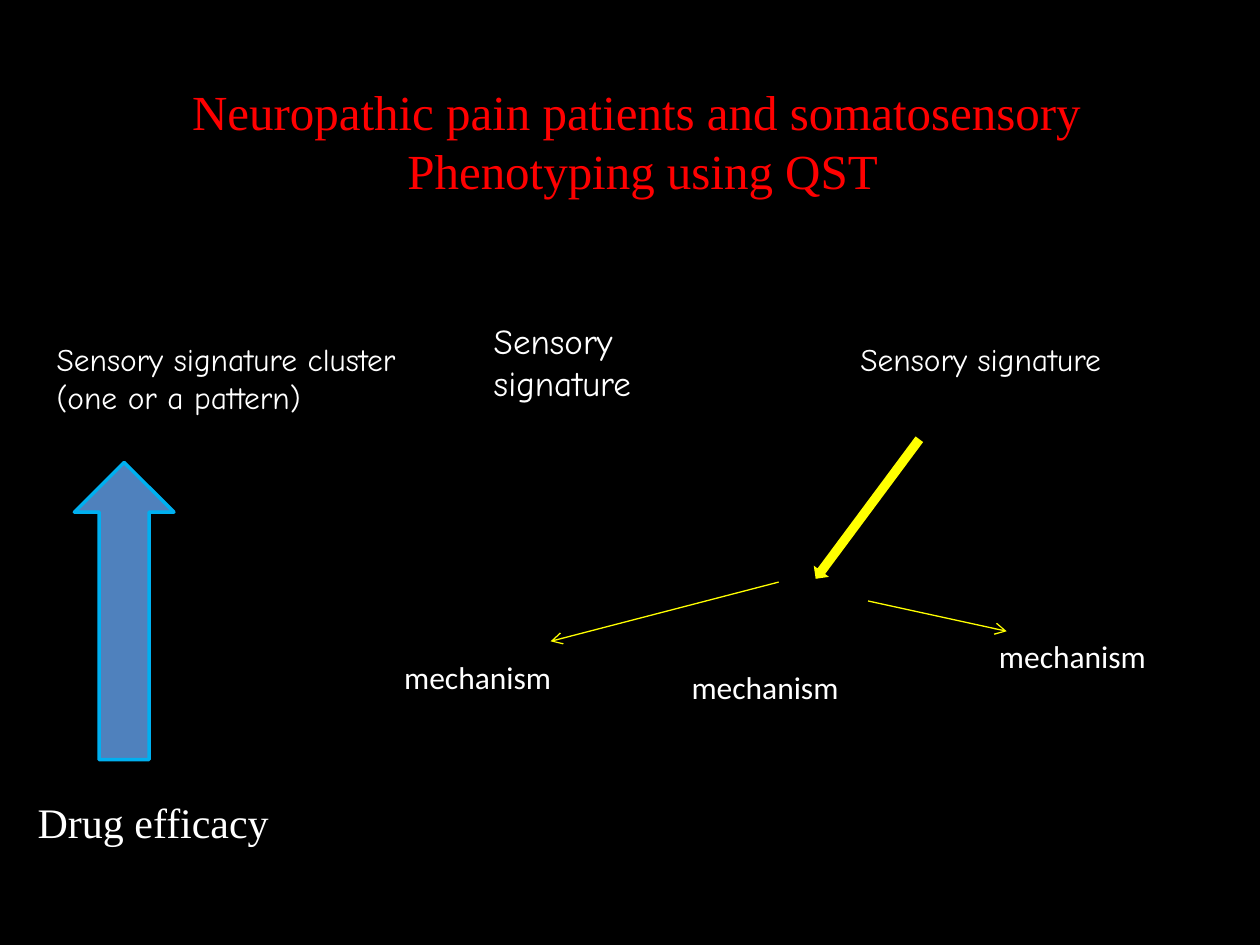
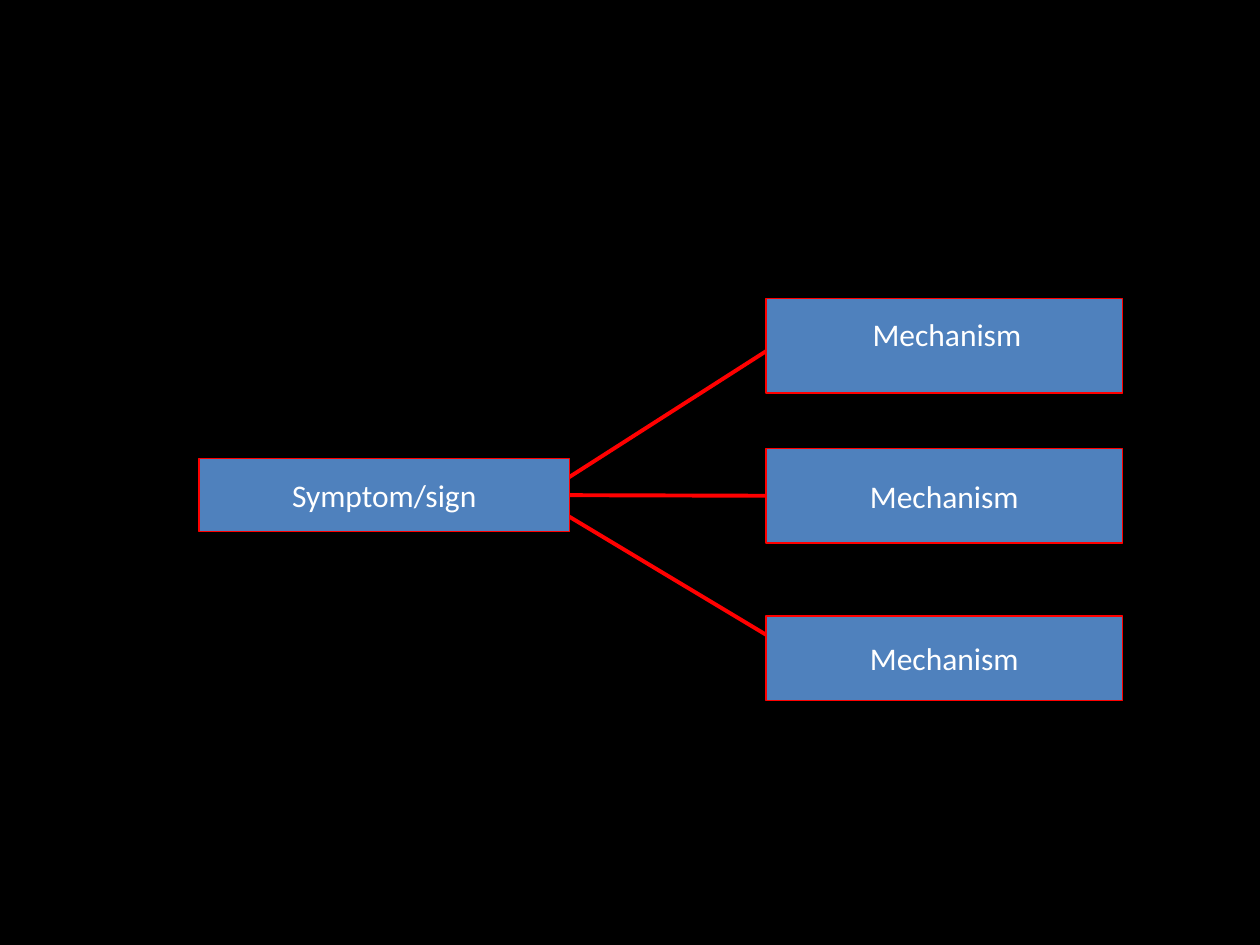
from pptx import Presentation
from pptx.dml.color import RGBColor
from pptx.enum.shapes import MSO_CONNECTOR as CONN, MSO_SHAPE as SHAPE
from pptx.enum.text import MSO_ANCHOR as ANCHOR, MSO_AUTO_SIZE as AUTO, PP_ALIGN as ALIGN
from pptx.oxml.ns import qn
from pptx.util import Inches, Pt
from lxml import etree

COLORS = {"black": "000000", "white": "FFFFFF", "red": "FF0000",
          "yellow": "FFFF00", "blue": "4F81BD", "sky": "00B0F0"}
SANS, SERIF, COMIC = "Calibri", "Times New Roman", "Comic Neue"

# Slide 1 content: text, (left, top, width, height), font, size
TITLE = ["Neuropathic pain patients and somatosensory ", "Phenotyping using QST"]
LABELS = [
    ("Sensory signature cluster (one or a pattern)", (0.35, 2.65, 2.91, 0.71), COMIC, 18),
    ("Sensory signature", (3.82, 2.49, 2.05, 0.44), COMIC, 20),
    ("Sensory signature", (6.73, 2.65, 2.44, 0.4), COMIC, 18),
    ("mechanism", (3.11, 5.17, 2.2, 0.4), SANS, 18),
    ("mechanism", (5.39, 5.25, 1.81, 0.4), SANS, 18),
    ("mechanism", (7.83, 5.01, 1.65, 0.4), SANS, 18),
    ("Drug efficacy", (0.2, 6.27, 2.05, 0.5), SERIF, 24),
]
MECHANISM_ARROWS = [((6.18, 4.62), (4.37, 5.09)), ((6.89, 4.77), (7.99, 5.01))]

# Slide 2 content: mechanism boxes share one column
SYMPTOM = ("Symptom/sign", (1.58, 3.64, 2.94, 0.58))
COLUMN_LEFT, COLUMN_WIDTH = 6.08, 2.83
MECHANISMS = [("", 2.37, 0.75), ("Mechanism", 3.56, 0.75), ("Mechanism", 4.89, 0.67)]
TOP_LABEL = ("Mechanism", (6.17, 2.45, 2.69, 0.5), SANS, 18)
LINKS = [((4.45, 3.83), (6.17, 2.73)), ((4.47, 3.94), (6.22, 3.94)),
         ((4.45, 4.06), (6.25, 5.14))]


def rgb(name):
    return RGBColor.from_string(COLORS[name])


def inches(values):
    return [Inches(v) for v in values]


def add_slide(prs, layout):
    s = prs.slides.add_slide(prs.slide_layouts[layout])
    s.background.fill.solid()
    s.background.fill.fore_color.rgb = rgb("black")
    return s


def style_text(tf, font, size, color="white", align=ALIGN.LEFT):
    for p in tf.paragraphs:
        p.alignment = align
        for r in p.runs:
            r.font.name, r.font.size = font, Pt(size)
            r.font.color.rgb = rgb(color)


def add_title(s, lines, box):
    sp = s.shapes.title
    sp.left, sp.top, sp.width, sp.height = inches(box)
    tf = sp.text_frame
    tf.text = "\n".join(lines)
    tf.auto_size, tf.vertical_anchor = AUTO.NONE, ANCHOR.TOP
    style_text(tf, SERIF, 28, "red", ALIGN.CENTER)


def add_label(s, text, box, font, size, align=ALIGN.LEFT):
    tf = s.shapes.add_textbox(*inches(box)).text_frame
    tf.word_wrap = True
    tf.text = text
    style_text(tf, font, size, align=align)


def add_block(s, kind, box, fill, line=None, width=0.75, text=""):
    sp = s.shapes.add_shape(kind, *inches(box))
    sp.shadow.inherit = False
    sp.fill.solid()
    sp.fill.fore_color.rgb = rgb(fill)
    if line:
        sp.line.color.rgb, sp.line.width = rgb(line), Pt(width)
    else:
        sp.line.fill.background()
    if text:
        tf = sp.text_frame
        tf.text = text
        tf.word_wrap, tf.vertical_anchor = False, ANCHOR.MIDDLE
        style_text(tf, SANS, 18, align=ALIGN.CENTER)
    return sp


def add_line(s, start, end, color, width, arrow=False):
    c = s.shapes.add_connector(CONN.STRAIGHT, *inches(start + end))
    c.line.color.rgb, c.line.width = rgb(color), Pt(width)
    if arrow:
        etree.SubElement(c.line._get_or_add_ln(), qn("a:tailEnd"), type="arrow")
    etree.SubElement(c._element.spPr, qn("a:effectLst"))
    return c


def build_phenotyping(prs):
    s = add_slide(prs, 5)
    add_title(s, TITLE, (0.2, 0.6, 9.8, 1.04))
    for label in LABELS:
        add_label(s, *label)
    # Arrows from signature to mechanisms, and up from drug efficacy
    add_block(s, SHAPE.DOWN_ARROW, (6.81, 3.35, 0.15, 1.38), "yellow").rotation = 36.6
    for start, end in MECHANISM_ARROWS:
        add_line(s, start, end, "yellow", 0.75, arrow=True)
    add_block(s, SHAPE.UP_ARROW, (0.59, 3.67, 0.79, 2.36), "blue", "sky", 2)


def build_symptom_map(prs):
    s = add_slide(prs, 6)
    # Links lie behind the boxes
    links = [add_line(s, start, end, "red", 2.25) for start, end in LINKS]
    boxes = [add_block(s, SHAPE.RECTANGLE, (COLUMN_LEFT, top, COLUMN_WIDTH, height),
                       "blue", "red", text=text) for text, top, height in MECHANISMS]
    add_label(s, *TOP_LABEL, align=ALIGN.CENTER)
    text, box = SYMPTOM
    symptom = add_block(s, SHAPE.RECTANGLE, box, "blue", "red", text=text)
    # The middle link joins the two facing sides
    links[1].begin_connect(symptom, 3)
    links[1].end_connect(boxes[1], 1)


def main():
    prs = Presentation()
    prs.slide_width, prs.slide_height = Inches(10), Inches(7.5)
    build_phenotyping(prs)
    build_symptom_map(prs)
    prs.save("out.pptx")


if __name__ == "__main__":
    main()
